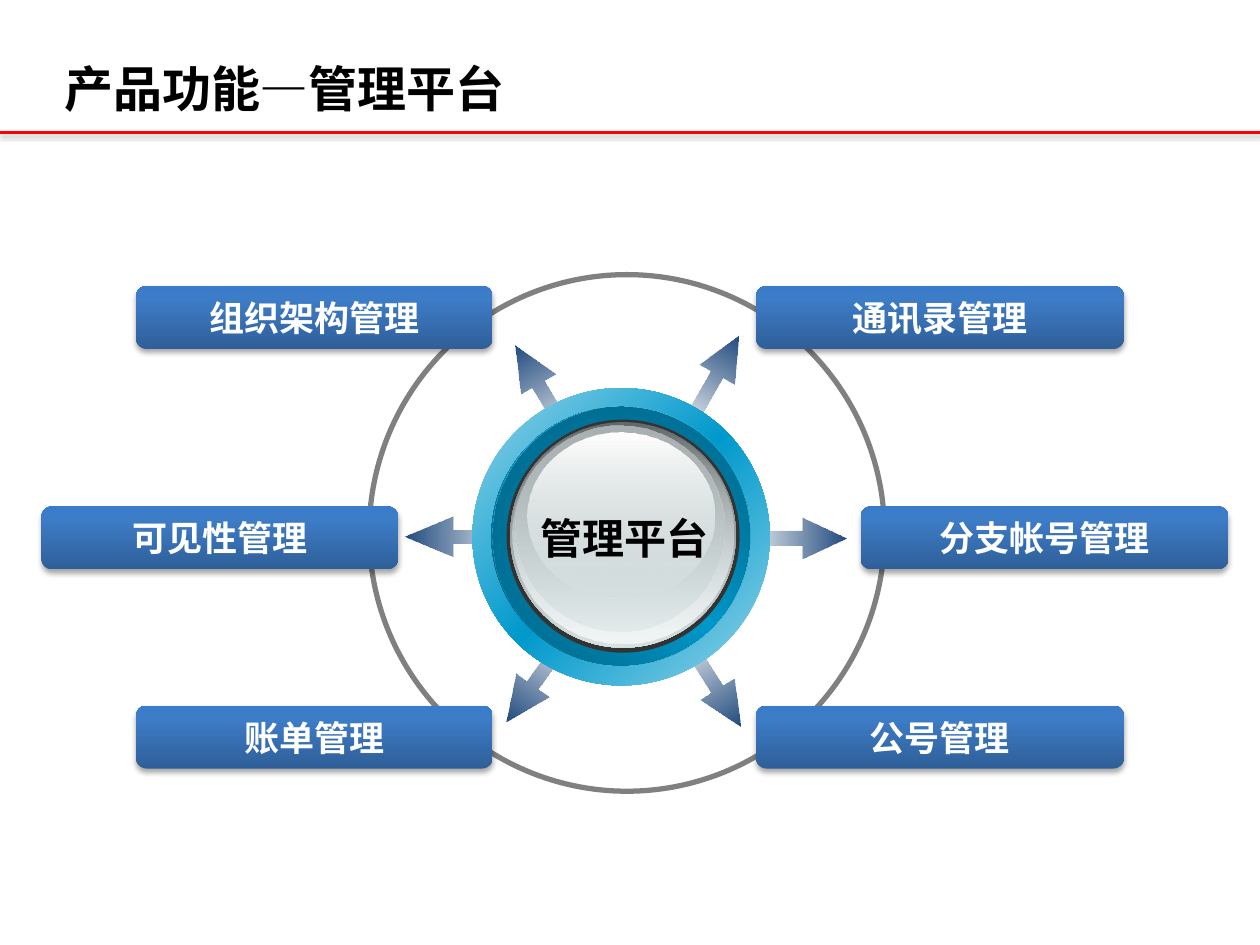
"""Build the management platform slide: a glossy hub with six functions around it."""
from dataclasses import dataclass

from lxml import etree
from pptx import Presentation
from pptx.dml.color import RGBColor
from pptx.enum.shapes import MSO_CONNECTOR, MSO_SHAPE
from pptx.enum.text import MSO_ANCHOR, PP_ALIGN
from pptx.oxml.ns import qn
from pptx.util import Inches, Pt

OVAL = MSO_SHAPE.OVAL
ARROW = MSO_SHAPE.RIGHT_ARROW
ROUNDED = MSO_SHAPE.ROUNDED_RECTANGLE
STRAIGHT = MSO_CONNECTOR.STRAIGHT
CENTER = PP_ALIGN.CENTER
JUSTIFY = PP_ALIGN.JUSTIFY
MIDDLE = MSO_ANCHOR.MIDDLE

CJK_FONT = "Noto Sans CJK SC"
LABEL_FONT = "DejaVu Sans"

BLACK = RGBColor(0x00, 0x00, 0x00)
WHITE = RGBColor(0xFF, 0xFF, 0xFF)
RED = RGBColor(0xFF, 0x00, 0x00)
GREY = RGBColor(0x80, 0x80, 0x80)
CHARCOAL = RGBColor(0x33, 0x33, 0x33)
NAVY = RGBColor(0x1F, 0x49, 0x7D)
DEEP_NAVY = RGBColor(0x1D, 0x45, 0x77)
LABEL_DARK = RGBColor(0x2F, 0x5F, 0x99)
LABEL_MID = RGBColor(0x3D, 0x7C, 0xC7)
LABEL_LIGHT = RGBColor(0x3A, 0x7C, 0xCB)
CYAN = RGBColor(0x00, 0x99, 0xCC)
PALE_CYAN = RGBColor(0x93, 0xD4, 0xE9)
DARK_TEAL = RGBColor(0x00, 0x53, 0x6E)
TEAL = RGBColor(0x00, 0x61, 0x82)
STEEL = RGBColor(0x63, 0x68, 0x69)
SILVER = RGBColor(0xAA, 0xB2, 0xB3)
MIST = RGBColor(0xD6, 0xE1, 0xE2)
FROST = RGBColor(0xF1, 0xF5, 0xF5)


@dataclass(frozen=True)
class Stop:
    position: int
    color: RGBColor
    opacity: int = 100


@dataclass(frozen=True)
class Gradient:
    angle: int
    stops: tuple[Stop, ...]


@dataclass(frozen=True)
class Disc:
    left: float
    top: float
    width: float
    height: float
    fill: Gradient | RGBColor


@dataclass(frozen=True)
class Pointer:
    left: float
    top: float
    rotation: float
    width: float = 0.87


@dataclass(frozen=True)
class Function:
    name: str
    left: float
    top: float
    width: float


ARROW_FILL = Gradient(0, (Stop(0, DEEP_NAVY, 0), Stop(100, NAVY)))
LABEL_FILL = Gradient(270, (Stop(0, LABEL_DARK), Stop(80, LABEL_MID), Stop(100, LABEL_LIGHT)))

POINTERS = (
    Pointer(5.21, 2.88, 299.6),
    Pointer(5.21, 5.24, 57.8),
    Pointer(3.88, 2.96, 239.5),
    Pointer(3.84, 5.21, 125.6),
    Pointer(5.85, 4.11, 0),
    Pointer(3.21, 4.1, 180, 0.94),
)
HUB = (
    Disc(3.75, 3.08, 2.36, 2.36,
         Gradient(45, (Stop(0, PALE_CYAN), Stop(50, CYAN), Stop(100, PALE_CYAN)))),
    Disc(3.9, 3.23, 2.05, 2.05,
         Gradient(315, (Stop(0, DARK_TEAL), Stop(50, CYAN), Stop(100, DARK_TEAL)))),
    Disc(3.91, 3.23, 2.05, 2.05, Gradient(45, (Stop(0, TEAL), Stop(100, CYAN, 0)))),
    Disc(4.02, 3.33, 1.85, 1.85, CHARCOAL),
    Disc(4.05, 3.35, 1.79, 1.79, Gradient(90, (Stop(0, STEEL), Stop(100, MIST)))),
    Disc(4.07, 3.36, 1.75, 1.75, Gradient(90, (Stop(0, MIST, 0), Stop(100, FROST)))),
    Disc(4.09, 3.38, 1.66, 1.63, Gradient(90, (Stop(0, SILVER), Stop(100, MIST, 48)))),
    Disc(4.19, 3.43, 1.48, 1.32, Gradient(90, (Stop(0, WHITE), Stop(100, MIST, 38)))),
)
LEFT_WIDTH, RIGHT_WIDTH = 2.83, 2.92
UPPER, CENTRE, LOWER = 2.27, 4.02, 5.6
FUNCTIONS = (
    Function("可见性管理", 0.33, CENTRE, LEFT_WIDTH),
    Function("组织架构管理", 1.08, UPPER, LEFT_WIDTH),
    Function("账单管理", 1.08, LOWER, LEFT_WIDTH),
    Function("分支帐号管理", 6.83, CENTRE, RIGHT_WIDTH),
    Function("通讯录管理", 6, UPPER, RIGHT_WIDTH),
    Function("公号管理", 6, LOWER, RIGHT_WIDTH),
)


def add_color(parent, color: RGBColor, opacity: int) -> None:
    value = etree.SubElement(parent, qn("a:srgbClr"), val=str(color))
    etree.SubElement(value, qn("a:alpha"), val=str(opacity * 1000))


def paint(shape, fill: Gradient | RGBColor) -> None:
    if isinstance(fill, RGBColor):
        shape.fill.solid()
        shape.fill.fore_color.rgb = fill
        return
    shape.fill.gradient()
    gradient = shape._element.spPr.find(qn("a:gradFill"))
    for child in list(gradient):
        gradient.remove(child)
    stops = etree.SubElement(gradient, qn("a:gsLst"))
    for stop in fill.stops:
        mark = etree.SubElement(stops, qn("a:gs"), pos=str(stop.position * 1000))
        add_color(mark, stop.color, stop.opacity)
    etree.SubElement(gradient, qn("a:lin"), ang=str(fill.angle * 60000), scaled="0")


def add_shadow(shape, opacity: int, distance: float) -> None:
    properties = shape._element.spPr
    effects = properties.find(qn("a:effectLst"))
    if effects is None:
        effects = etree.SubElement(properties, qn("a:effectLst"))
    shadow = etree.SubElement(
        effects, qn("a:outerShdw"), blurRad=str(Pt(3.1)), dist=str(Pt(distance)),
        dir="5400000", rotWithShape="0")
    add_color(shadow, BLACK, opacity)


def add_filled(shapes, kind, left: float, top: float, width: float, height: float,
               fill: Gradient | RGBColor):
    shape = shapes.add_shape(kind, Inches(left), Inches(top), Inches(width), Inches(height))
    shape.shadow.inherit = False
    paint(shape, fill)
    shape.line.fill.background()
    return shape


def write(frame, text: str, size: int, font: str, color: RGBColor, align=CENTER) -> None:
    frame.text = text
    paragraph = frame.paragraphs[0]
    paragraph.alignment = align
    paragraph.font.size = Pt(size)
    paragraph.font.name = font
    paragraph.font.bold = True
    paragraph.font.color.rgb = color


def add_heading(slide) -> None:
    rule = slide.shapes.add_connector(STRAIGHT, 0, Inches(1.05), Inches(10), Inches(1.05))
    rule.line.color.rgb = RED
    rule.line.width = Pt(1.5)
    add_shadow(rule, 38, 1.6)
    title = slide.shapes.title
    title.left, title.top = Inches(0.51), Inches(0.28)
    title.width, title.height = Inches(6.22), Inches(0.83)
    frame = title.text_frame
    frame.margin_left = frame.margin_right = frame.margin_top = frame.margin_bottom = 0
    frame.vertical_anchor = MIDDLE
    write(frame, "产品功能—管理平台", 28, CJK_FONT, BLACK, JUSTIFY)


def add_pointer(shapes, pointer: Pointer) -> None:
    arrow = add_filled(shapes, ARROW, pointer.left, pointer.top, pointer.width, 0.32, ARROW_FILL)
    arrow.adjustments[0] = 0.35
    arrow.adjustments[1] = 1.21 if pointer.width > 0.9 else 1.11
    arrow.rotation = pointer.rotation


def add_orbit(shapes) -> None:
    orbit = shapes.add_shape(OVAL, Inches(2.93), Inches(2.18), Inches(4.09), Inches(4.1))
    orbit.shadow.inherit = False
    orbit.fill.background()
    orbit.line.color.rgb = GREY
    orbit.line.width = Pt(3)


def add_hub(shapes) -> None:
    hub = shapes.add_group_shape().shapes
    for disc in HUB:
        add_filled(hub, OVAL, disc.left, disc.top, disc.width, disc.height, disc.fill)
    caption = hub.add_textbox(Inches(4.18), Inches(4.02), Inches(1.55), Inches(0.51))
    caption.text_frame.word_wrap = False
    write(caption.text_frame, "管理平台", 24, CJK_FONT, BLACK)


def add_function(shapes, function: Function) -> None:
    label = add_filled(shapes, ROUNDED, function.left, function.top, function.width, 0.5, LABEL_FILL)
    add_shadow(label, 35, 1.8)
    label.text_frame.word_wrap = False
    label.text_frame.vertical_anchor = MIDDLE
    write(label.text_frame, function.name, 20, LABEL_FONT, WHITE)


def main() -> None:
    deck = Presentation()
    deck.slide_width, deck.slide_height = Inches(10), Inches(7.5)
    slide = deck.slides.add_slide(deck.slide_layouts[5])
    add_heading(slide)
    for pointer in POINTERS:
        add_pointer(slide.shapes, pointer)
    add_orbit(slide.shapes)
    add_hub(slide.shapes)
    for function in FUNCTIONS:
        add_function(slide.shapes, function)
    deck.save("out.pptx")


if __name__ == "__main__":
    main()
